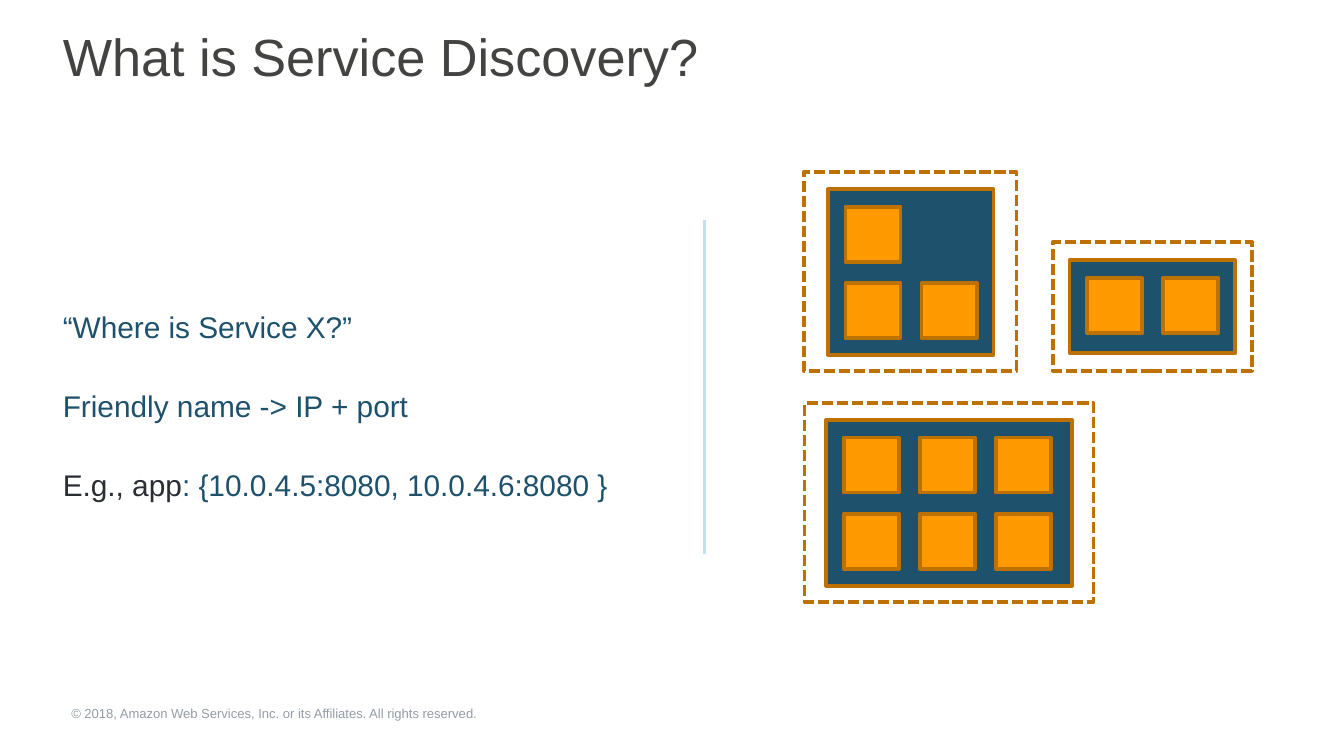
from dataclasses import dataclass
from pptx import Presentation
from pptx.dml.color import RGBColor
from pptx.enum.dml import MSO_LINE
from pptx.enum.shapes import MSO_CONNECTOR, MSO_SHAPE
from pptx.enum.text import MSO_ANCHOR
from pptx.util import Pt
from lxml.etree import SubElement
from pptx.oxml.ns import qn


@dataclass(frozen=True)
class Theme:
    font: str = "Arial"
    title: str = "434342"
    body: str = "1D516C"
    dark: str = "2A2D32"
    note: str = "959CA6"
    node: str = "1D516C"
    task: str = "FF9900"
    edge: str = "BD7100"
    rule: str = "C4E1EF"
    big: int = 28
    mid: int = 16
    small: int = 7
    stroke: float = 2
    thin: float = 1.75


def apply(item, form):
    for key, val in form.items():
        setattr(item, key, val)


class Deck:
    def __init__(self, theme, slide):
        self.theme = theme
        self.slide = slide

    def text(self, box, lines, size, pad=(7.2, 3.6), frame=None, para=None, gap=0):
        """Each line is a list of (words, color) runs."""
        shape = self.slide.shapes.add_textbox(*map(Pt, box))
        side, top = map(Pt, pad)
        area = shape.text_frame
        apply(area, {"word_wrap": True, "margin_left": side, "margin_right": side,
                     "margin_top": top, "margin_bottom": top, **(frame or {})})
        for i, line in enumerate(lines):
            par = area.paragraphs[0] if i == 0 else area.add_paragraph()
            apply(par, para or {})
            if i:
                par.space_before = Pt(gap)
            for words, color in line:
                run = par.add_run()
                run.text = words
                apply(run.font, {"name": self.theme.font, "size": Pt(size)})
                run.font.color.rgb = RGBColor.from_string(color)

    def rect(self, group, box, fill=None, dash=None):
        shape = group.shapes.add_shape(MSO_SHAPE.RECTANGLE, *map(Pt, box))
        shape.shadow.inherit = False
        if fill:
            shape.fill.solid()
            shape.fill.fore_color.rgb = RGBColor.from_string(fill)
        else:
            shape.fill.background()
        shape.line.color.rgb = RGBColor.from_string(self.theme.edge)
        apply(shape.line, {"width": Pt(self.theme.stroke), "dash_style": dash})
        SubElement(shape.line._get_or_add_ln(), qn("a:round"))

    def host(self, frame, node, cells, side=29.5, step=40.8, inset=9.4):
        """A node with tasks at (column, row) cells, in a dashed frame."""
        group = self.slide.shapes.add_group_shape()
        self.rect(group, node, self.theme.node)
        for col, row in cells:
            spot = (node[0] + inset + col * step, node[1] + inset + row * step)
            self.rect(group, (*spot, side, side), self.theme.task)
        self.rect(group, frame, dash=MSO_LINE.SQUARE_DOT)

    def line(self, start, end):
        link = self.slide.shapes.add_connector(
            MSO_CONNECTOR.STRAIGHT, *map(Pt, start + end))
        link.line.color.rgb = RGBColor.from_string(self.theme.rule)
        link.line.width = Pt(self.theme.thin)
        SubElement(link._element.spPr, qn("a:effectLst"))


def main():
    show = Presentation()
    apply(show, {"slide_width": Pt(720), "slide_height": Pt(405)})
    look = Theme()
    deck = Deck(look, show.slides.add_slide(show.slide_layouts[6]))

    # Footer and title
    deck.text((38.2, 378, 238.3, 8.6), [[(
        "© 2018, Amazon Web Services, Inc. or its Affiliates. All rights reserved.",
        look.note)]], look.small, pad=(0, 0))
    deck.text((26.6, 9.4, 645.8, 43.2),
              [[("What is Service Discovery?", look.title)]], look.big)

    # Body
    deck.text((26.6, 143.3, 342.7, 128.9), [
        [("“Where is Service X?”", look.body)],
        [("Friendly name -> IP + port", look.body)],
        [("E.g., app", look.dark), (": {10.0.4.5:8080, 10.0.4.6:8080 }", look.body)],
    ], look.mid, frame={"vertical_anchor": MSO_ANCHOR.MIDDLE},
        para={"line_spacing": 2.0}, gap=4)

    # Hosts with their tasks
    deck.host((430.6, 92.2, 114, 106.6), (443.5, 101.4, 88.8, 88.8),
              [(0, 0), (0, 1), (1, 1)])
    deck.host((564, 129.6, 106.6, 69.1), (573, 139.5, 88.8, 49.7),
              [(0, 0), (1, 0)])
    deck.host((431, 216, 154.8, 106.6), (442.6, 225, 131.8, 88.8),
              [(col, row) for row in range(2) for col in range(3)])

    # Divider
    deck.line((377.3, 118.1), (377.3, 296.6))

    show.save("out.pptx")


if __name__ == "__main__":
    main()
